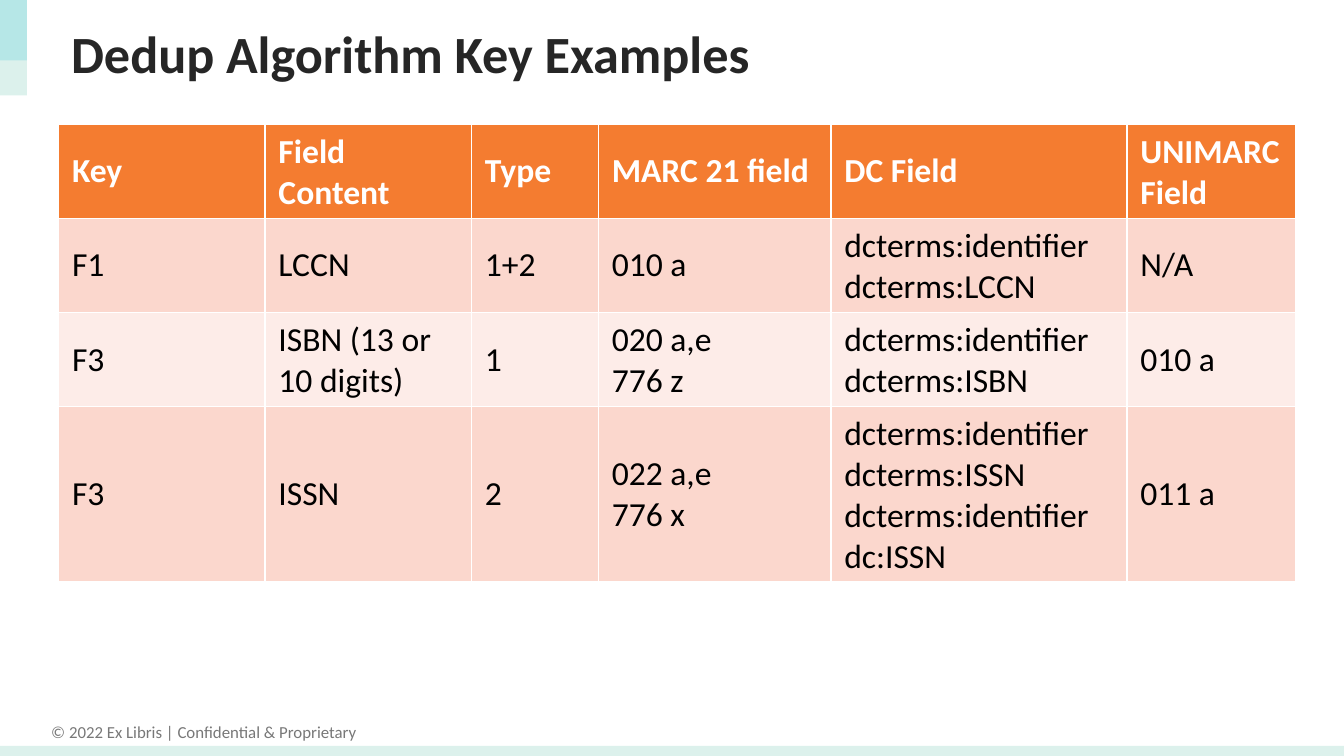
from pptx import Presentation
from pptx.dml.color import RGBColor
from pptx.enum.shapes import MSO_SHAPE
from pptx.enum.text import MSO_ANCHOR, PP_ALIGN
from pptx.oxml.ns import qn
from pptx.util import Pt
from lxml.etree import SubElement

WHITE = RGBColor(0xFF, 0xFF, 0xFF)
BLACK = RGBColor(0x00, 0x00, 0x00)
DARK = RGBColor(0x26, 0x26, 0x26)
GRAY = RGBColor(0x78, 0x78, 0x78)
MINT = RGBColor(0xDC, 0xF1, 0xEC)
TEAL = RGBColor(0x50, 0xCF, 0xDA)
ORANGE = RGBColor(0xF4, 0x7C, 0x30)
PEACH = RGBColor(0xFB, 0xD7, 0xCD)
PALE = RGBColor(0xFD, 0xEC, 0xE8)


def style(p, size, color, bold=False):
    p.font.name = "Calibri"
    p.font.size = Pt(size)
    p.font.bold = bold
    p.font.color.rgb = color


prs = Presentation()
prs.slide_width = Pt(720)
prs.slide_height = Pt(405)
s = prs.slides.add_slide(prs.slide_layouts[6])

tf = s.shapes.add_textbox(Pt(19.44), Pt(383), Pt(179.28), Pt(18)).text_frame
tf.word_wrap = False
p = tf.paragraphs[0]
p.text = "© 2022 Ex Libris | Confidential & Proprietary"
p.alignment = PP_ALIGN.CENTER
style(p, 9, GRAY)

for top, width, height, color in [
    (399.6, 720, 7.92, MINT),
    (0, 14.4, 51.12, MINT),
    (0, 14.4, 32.4, TEAL),
]:
    sp = s.shapes.add_shape(MSO_SHAPE.RECTANGLE, 0, Pt(top), Pt(width), Pt(height))
    sp.shadow.inherit = False
    sp.fill.solid()
    sp.fill.fore_color.rgb = color
    sp.line.fill.background()
    if color == TEAL:
        clr = sp.fill._xPr.find(qn("a:solidFill"))[0]
        SubElement(clr, qn("a:alpha"), val="27000")

tf = s.shapes.add_textbox(Pt(31), Pt(5.76), Pt(663), Pt(45.36)).text_frame
tf.word_wrap = True
tf.vertical_anchor = MSO_ANCHOR.MIDDLE
p = tf.paragraphs[0]
p.text = "Dedup Algorithm Key Examples"
style(p, 28, DARK, True)

rows = [
    ["Key", "Field Content", "Type", "MARC 21 field", "DC Field", "UNIMARC Field"],
    ["F1", "LCCN", "1+2", "010 a", "dcterms:identifier dcterms:LCCN", "N/A"],
    ["F3", "ISBN (13 or 10 digits)", "1", "020 a,e\n776 z",
     "dcterms:identifier dcterms:ISBN", "010 a"],
    ["F3", "ISSN", "2", "022 a,e\n776 x",
     "dcterms:identifier dcterms:ISSN\vdcterms:identifier dc:ISSN", "011 a"],
]
widths = [110.6, 110.6, 68, 124.6, 158.6, 90.6]
heights = [50.4, 50.4, 50.4, 93.6]
fills = [ORANGE, PEACH, PALE, PEACH]

table = s.shapes.add_table(
    len(rows), len(widths), Pt(31.4), Pt(66.6), Pt(sum(widths)), Pt(sum(heights))
).table
for col, width in zip(table.columns, widths):
    col.width = Pt(width)
for i, (row, height, fill) in enumerate(zip(rows, heights, fills)):
    table.rows[i].height = Pt(height)
    for j, text in enumerate(row):
        cell = table.cell(i, j)
        cell.text = text
        cell.vertical_anchor = MSO_ANCHOR.MIDDLE
        cell.fill.solid()
        cell.fill.fore_color.rgb = fill
        for p in cell.text_frame.paragraphs:
            style(p, 18, WHITE if i == 0 else BLACK, i == 0)

prs.save("out.pptx")
